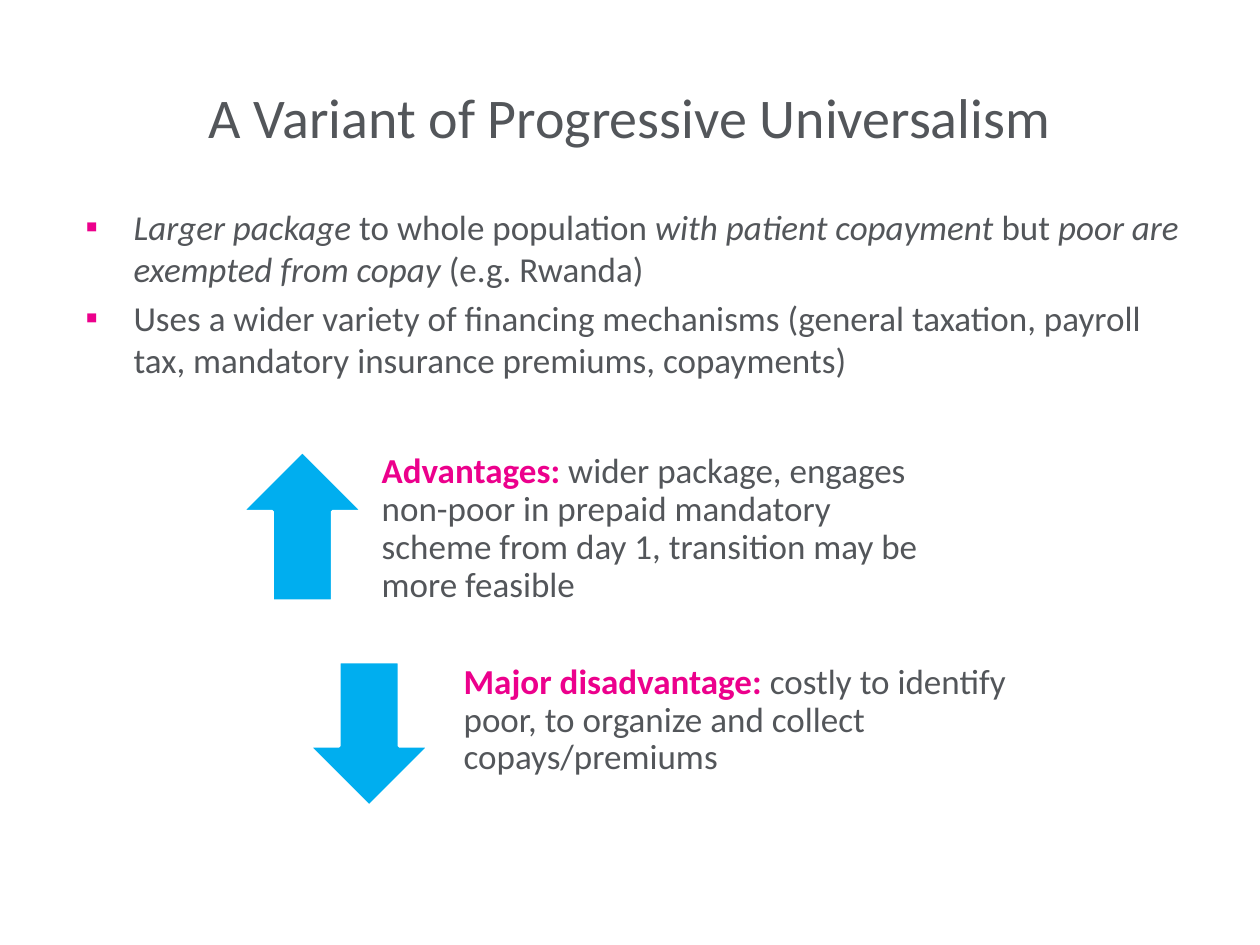
from collections import namedtuple
from dataclasses import dataclass

import pptx
import pptx.dml.color
import pptx.enum.shapes
import pptx.enum.text
import pptx.oxml
import pptx.oxml.ns
import pptx.util

Box = namedtuple("Box", "left top width height")
ANCHOR = pptx.enum.text.MSO_ANCHOR
ARROW = pptx.enum.shapes.MSO_SHAPE


@dataclass(frozen=True)
class Theme:
    font: str = "Calibri"
    ink: str = "53565A"
    accent: str = "EC008C"
    arrow: str = "00AEEF"
    paper: str = "FFFFFF"
    title_size: int = 32
    text_size: int = 20


THEME = Theme()
SLIDE = Box(0, 0, pptx.util.Inches(10), pptx.util.Inches(7.5))


def rgb(code):
    return pptx.dml.color.RGBColor.from_string(code)


def share(box, left, top, width, height):
    """Box inside another one, in percent of its size."""
    return Box(round(box.left + box.width * left / 100),
               round(box.top + box.height * top / 100),
               round(box.width * width / 100),
               round(box.height * height / 100))


def place(placeholder, box):
    placeholder.left, placeholder.top, placeholder.width, placeholder.height = box


def add_text(paragraph, text, size=THEME.text_size, color=THEME.ink,
             bold=False, italic=False):
    run = paragraph.add_run()
    run.text = text
    run.font.name = THEME.font
    run.font.size = pptx.util.Pt(size)
    run.font.color.rgb = rgb(color)
    run.font.bold = bold
    run.font.italic = italic


def set_frame(frame, anchor):
    frame.word_wrap = True
    frame.auto_size = pptx.enum.text.MSO_AUTO_SIZE.NONE
    frame.vertical_anchor = anchor


def add_bullet(paragraph):
    indent = pptx.util.Inches(0.38)
    properties = paragraph._p.get_or_add_pPr()
    properties.set("marL", str(indent))
    properties.set("indent", str(-indent))
    namespace = pptx.oxml.ns.nsdecls("a")
    for xml in (f'<a:buClr {namespace}><a:srgbClr val="{THEME.accent}"/></a:buClr>',
                f'<a:buFont {namespace} typeface="{THEME.font}"/>',
                f'<a:buChar {namespace} char="▪"/>'):
        properties.append(pptx.oxml.parse_xml(xml))


def write_title(slide, box, text):
    title = slide.shapes.title
    place(title, box)
    set_frame(title.text_frame, ANCHOR.MIDDLE)
    paragraph = title.text_frame.paragraphs[0]
    paragraph.alignment = pptx.enum.text.PP_ALIGN.CENTER
    add_text(paragraph, text, size=THEME.title_size)


def write_features(slide, box, features):
    """Bulleted list; each feature is a list of (text, italic) pieces."""
    body = slide.placeholders[1]
    place(body, box)
    frame = body.text_frame
    set_frame(frame, ANCHOR.TOP)
    for index, pieces in enumerate(features):
        paragraph = frame.add_paragraph() if index else frame.paragraphs[0]
        add_bullet(paragraph)
        paragraph.space_before = pptx.util.Pt(4 if index else 0)
        for text, italic in pieces:
            add_text(paragraph, text, italic=italic)


def draw_argument(slide, box, direction, arrow_area, text_left, label, text):
    """Arrow on the left of the box and its explanation on the right."""
    arrow = slide.shapes.add_shape(direction, *share(box, *arrow_area))
    arrow.shadow.inherit = False
    arrow.fill.solid()
    arrow.fill.fore_color.rgb = rgb(THEME.arrow)
    arrow.line.color.rgb = rgb(THEME.paper)
    arrow.line.width = pptx.util.Pt(2)

    explanation = slide.shapes.add_textbox(
        *share(box, text_left, 0, 100 - text_left, 100))
    frame = explanation.text_frame
    set_frame(frame, ANCHOR.MIDDLE)
    frame.margin_left = frame.margin_right = pptx.util.Inches(0.16)
    frame.margin_bottom = pptx.util.Inches(0.16)
    frame.margin_top = 0
    paragraph = frame.paragraphs[0]
    paragraph.line_spacing = 0.9
    add_text(paragraph, label, color=THEME.accent, bold=True)
    add_text(paragraph, text)


def main():
    presentation = pptx.Presentation()
    presentation.slide_width, presentation.slide_height = SLIDE.width, SLIDE.height
    slide = presentation.slides.add_slide(presentation.slide_layouts[1])

    # Title and list
    write_title(slide, share(SLIDE, 5, 4, 90, 16.67),
                "A Variant of Progressive Universalism")
    write_features(slide, share(SLIDE, 5.8, 21.07, 90, 30), [
        [("Larger package ", True), ("to whole population ", False),
         ("with patient copayment", True), (" but ", False),
         ("poor are exempted from copay ", True), ("(e.g. Rwanda)", False)],
        [("Uses a wider variety of financing mechanisms (general taxation, "
          "payroll tax, mandatory insurance premiums, copayments)", False)],
    ])

    # Arguments for and against
    draw_argument(slide, share(SLIDE, 19.2, 47.73, 56.2, 18.67),
                  ARROW.UP_ARROW, (0, 0, 17.08, 85), 16.9, "Advantages: ",
                  "wider package, engages non-poor in prepaid mandatory scheme "
                  "from day 1, transition may be more feasible")
    draw_argument(slide, share(SLIDE, 24.5, 68, 57.4, 18.67),
                  ARROW.DOWN_ARROW, (0, 10.71, 16.72, 82.14), 18.64,
                  "Major disadvantage: ",
                  "costly to identify poor, to organize and collect "
                  "copays/premiums")

    presentation.save("out.pptx")


if __name__ == "__main__":
    main()
